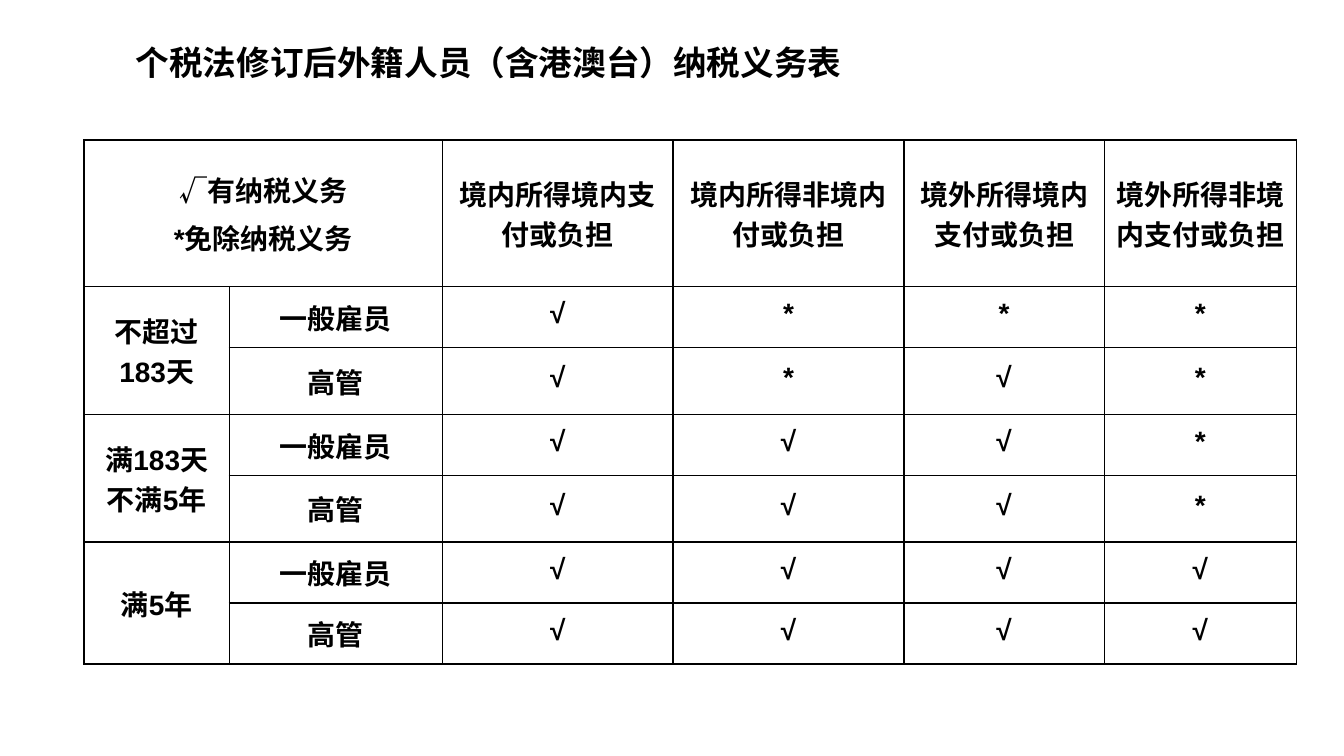
from lxml.etree import SubElement
from pptx import Presentation
from pptx.dml.color import RGBColor
from pptx.enum.text import MSO_ANCHOR, PP_ALIGN
from pptx.oxml.ns import qn
from pptx.util import Pt

TITLE = "个税法修订后外籍人员（含港澳台）纳税义务表"
LEGEND = "√有纳税义务\n*免除纳税义务"
INCOME_TYPES = ["境内所得境内支付或负担", "境内所得非境内付或负担",
                "境外所得境内支付或负担", "境外所得非境内支付或负担"]
STAFF = ["一般雇员", "高管"]
DUTIES = [("不超过183天", ["√***", "√*√*"]),
          ("满183天不满5年", ["√√√*", "√√√*"]),
          ("满5年", ["√√√√", "√√√√"])]
COLUMN_WIDTHS = [77.9, 114.1, 123.6, 123.6, 107.5, 102.8]
ROW_HEIGHTS = [78.5, 32.7, 35.7, 32.7, 35.7, 32.7, 32.7]
BLACK = "000000"


def color(value):
    """Turn a hex string into a colour."""
    return RGBColor.from_string(value)


def style_font(font, size):
    """Apply the bold black face shared by all text."""
    font.name, font.size, font.bold = "Arial", Pt(size), True
    font.color.rgb = color(BLACK)


def add_borders(cell):
    """Draw a thin black line on all four sides of a cell."""
    properties = cell._tc.get_or_add_tcPr()
    for side in ("lnL", "lnR", "lnT", "lnB"):
        line = SubElement(properties, qn(f"a:{side}"), w=str(Pt(1)))
        fill = SubElement(line, qn("a:solidFill"))
        SubElement(fill, qn("a:srgbClr"), val=BLACK)


def fill_cell(cell, text, line_spacing=None):
    """Write centred text into a cell."""
    cell.text = text
    for paragraph in cell.text_frame.paragraphs:
        paragraph.alignment = PP_ALIGN.CENTER
        paragraph.space_after = Pt(3.8)
        paragraph.line_spacing = line_spacing
        style_font(paragraph.font, 15)


def add_title(slide):
    """Place and format the slide title."""
    title = slide.shapes.title
    title.left, title.top, title.width, title.height = Pt(65.5), Pt(19.4), Pt(435.6), Pt(28.1)
    title.text = TITLE
    title.text_frame.vertical_anchor = MSO_ANCHOR.MIDDLE
    paragraph = title.text_frame.paragraphs[0]
    paragraph.alignment = PP_ALIGN.LEFT
    style_font(paragraph.font, 18)


def add_duty_table(slide):
    """Build the table of tax duties by stay, staff and income type."""
    table = slide.shapes.add_table(
        len(ROW_HEIGHTS), len(COLUMN_WIDTHS), Pt(45), Pt(75.1),
        Pt(sum(COLUMN_WIDTHS)), Pt(sum(ROW_HEIGHTS))).table
    table.first_row = table.horz_banding = False
    for column, width in zip(table.columns, COLUMN_WIDTHS):
        column.width = Pt(width)
    for row, height in zip(table.rows, ROW_HEIGHTS):
        row.height = Pt(height)
    for cell in table.iter_cells():
        cell.margin_left = cell.margin_right = Pt(4.3)
        cell.margin_top = cell.margin_bottom = 0
        cell.vertical_anchor = MSO_ANCHOR.MIDDLE
        add_borders(cell)
        cell.fill.background()

    table.cell(0, 0).merge(table.cell(0, 1))
    fill_cell(table.cell(0, 0), LEGEND)
    for column, income in enumerate(INCOME_TYPES, 2):
        fill_cell(table.cell(0, column), income)
    for group, (stay, mark_rows) in enumerate(DUTIES):
        top = 1 + group * len(STAFF)
        table.cell(top, 0).merge(table.cell(top + len(STAFF) - 1, 0))
        fill_cell(table.cell(top, 0), stay)
        for row, (staff, marks) in enumerate(zip(STAFF, mark_rows), top):
            fill_cell(table.cell(row, 1), staff)
            for column, mark in enumerate(marks, 2):
                fill_cell(table.cell(row, column), mark, Pt(13.5))


def main():
    """Create and save the presentation."""
    presentation = Presentation()
    presentation.slide_width, presentation.slide_height = Pt(720), Pt(405)
    slide = presentation.slides.add_slide(presentation.slide_layouts[5])
    add_title(slide)
    add_duty_table(slide)
    presentation.save("out.pptx")


if __name__ == "__main__":
    main()
